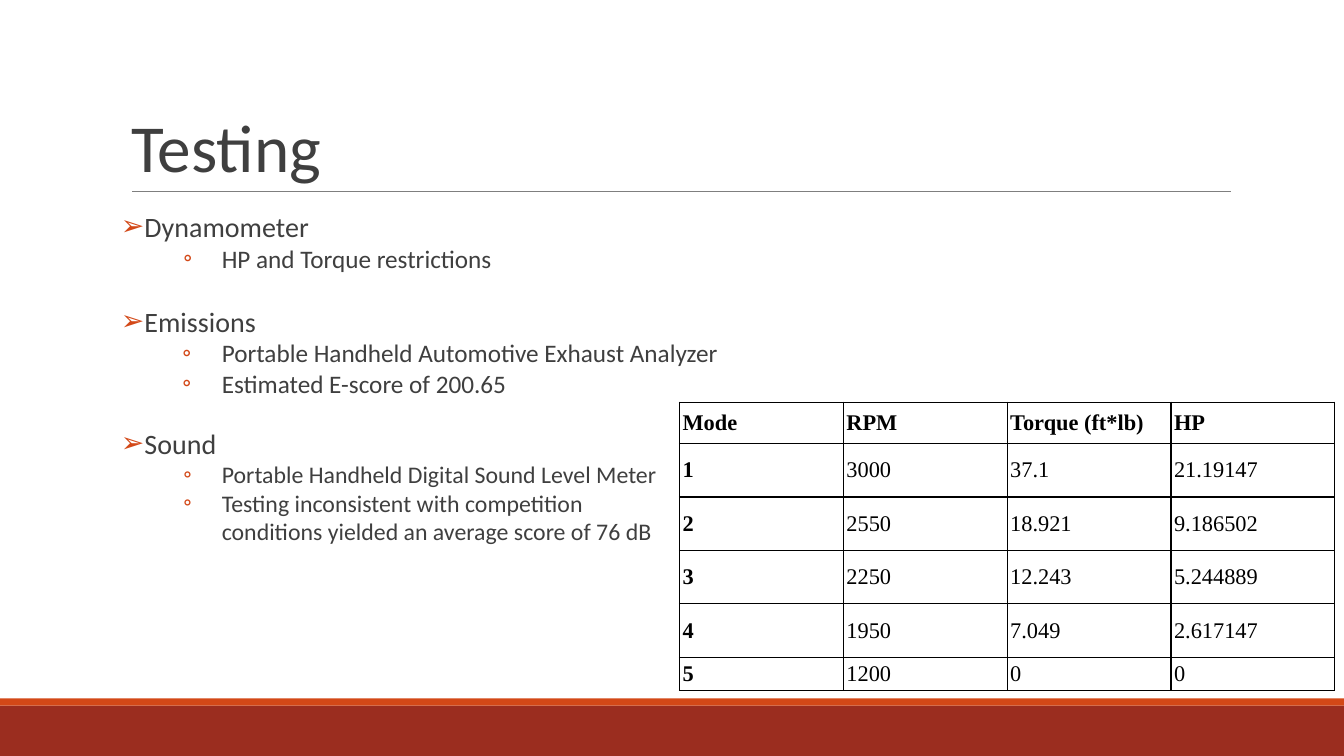
from lxml import etree
from pptx import Presentation
from pptx.dml.color import RGBColor
from pptx.enum import shapes, text
from pptx.oxml import parse_xml
from pptx.oxml.ns import nsdecls, qn
from pptx.util import Inches, Pt

RUST = RGBColor(0x9B, 0x2D, 0x1F)
ORANGE = RGBColor(0xD3, 0x48, 0x17)
GRAY = RGBColor(0x7F, 0x7F, 0x7F)
DARK = RGBColor(0x3F, 0x3F, 0x3F)
BLACK = RGBColor(0, 0, 0)
WHITE = RGBColor(255, 255, 255)

TOPICS = [
    ("Dynamometer", 0, 18, 0.38, ["HP and Torque restrictions"]),
    ("Emissions", 22, 18, 0.39, [
        "Portable Handheld Automotive Exhaust Analyzer",
        "Estimated E-score of 200.65",
    ]),
    ("Sound", 20, 17, 0.38, [
        "Portable Handheld Digital Sound Level Meter",
        "Testing inconsistent with competition\vconditions yielded an average score of 76 dB",
    ]),
]

ROWS = [
    ("Mode", "RPM", "Torque (ft*lb)", "HP"),
    ("1", "3000", "37.1", "21.19147"),
    ("2", "2550", "18.921", "9.186502"),
    ("3", "2250", "12.243", "5.244889"),
    ("4", "1950", "7.049", "2.617147"),
    ("5", "1200", "0", "0"),
]
HEIGHTS = [0.41, 0.53, 0.53, 0.53, 0.53, 0.32]


def put(obj, **vals):
    for name, val in vals.items():
        setattr(obj, name, val)


def style(para, size, color, face="Calibri", bold=False):
    for run in para.runs:
        put(run.font, size=Pt(size), name=face, bold=bold)
        run.font.color.rgb = color


def place(shape, left, top, width, height):
    put(shape, left=Inches(left), top=Inches(top),
        width=Inches(width), height=Inches(height))


def add_band(slide, top, height, color):
    band = slide.shapes.add_shape(
        shapes.MSO_SHAPE.RECTANGLE, 0, Inches(top), Inches(13.33), Inches(height))
    band.shadow.inherit = False
    band.fill.solid()
    band.fill.fore_color.rgb = color
    band.line.fill.background()


def add_rule(slide):
    rule = slide.shapes.add_connector(
        shapes.MSO_CONNECTOR.STRAIGHT,
        Inches(1.31), Inches(1.9), Inches(12.21), Inches(1.9))
    rule.line.color.rgb = GRAY
    rule.line.width = Pt(0.75)
    etree.SubElement(rule._element.spPr, qn("a:effectLst"))


def set_title(slide):
    title = slide.shapes.title
    place(title, 1.2, 0.31, 11, 1.59)
    frame = title.text_frame
    frame.text = "Testing"
    put(frame, vertical_anchor=text.MSO_ANCHOR.BOTTOM, word_wrap=True,
        auto_size=text.MSO_AUTO_SIZE.NONE)
    para = frame.paragraphs[0]
    put(para, alignment=text.PP_ALIGN.LEFT, line_spacing=0.85)
    style(para, 48, DARK)


def add_point(frame, words, size, mark, left, indent, level=0, gap=0):
    first = frame.paragraphs[0]
    para = frame.add_paragraph() if first.runs else first
    para.text = words
    put(para, level=level, space_before=Pt(gap))
    style(para, size, DARK)
    props = para._p.get_or_add_pPr()
    props.set("marL", str(Inches(left)))
    props.set("indent", str(Inches(indent)))
    color = etree.SubElement(props, qn("a:buClr"))
    etree.SubElement(color, qn("a:srgbClr"), val=str(ORANGE))
    etree.SubElement(props, qn("a:buFont"), typeface="Calibri")
    etree.SubElement(props, qn("a:buChar"), char=mark)


def add_topics(slide):
    box = slide.shapes.add_textbox(
        Inches(1.2), Inches(2.03), Inches(11), Inches(4.4))
    frame = box.text_frame
    put(frame, word_wrap=True, margin_left=0, margin_right=0)
    for head, gap, size, hang, points in TOPICS:
        add_point(frame, head, 20, "➢", 0.1, -0.14, gap=gap)
        for point in points:
            add_point(frame, point, size, "◦", 1, -hang, level=1)


def add_edges(cell):
    props = cell._tc.get_or_add_tcPr()
    for spot, side in enumerate(("lnL", "lnR", "lnT", "lnB")):
        props.insert(spot, parse_xml(
            f'<a:{side} {nsdecls("a")} w="12700"><a:solidFill>'
            f'<a:srgbClr val="{BLACK}"/></a:solidFill></a:{side}>'))


def add_modes(slide):
    table = slide.shapes.add_table(
        len(ROWS), len(ROWS[0]), Inches(6.74), Inches(3.99),
        Inches(6.5), Inches(sum(HEIGHTS))).table
    put(table, first_row=False, horz_banding=False)
    inset = Inches(0.03)
    for i, (row, height) in enumerate(zip(ROWS, HEIGHTS)):
        table.rows[i].height = Inches(height)
        for j, words in enumerate(row):
            cell = table.cell(i, j)
            put(cell, text=words, vertical_anchor=text.MSO_ANCHOR.MIDDLE,
                margin_left=inset, margin_right=inset,
                margin_top=inset, margin_bottom=inset)
            cell.fill.solid()
            cell.fill.fore_color.rgb = WHITE
            style(cell.text_frame.paragraphs[0], 16, BLACK,
                  "Times New Roman", i == 0 or j == 0)
            add_edges(cell)


def main():
    deck = Presentation()
    put(deck, slide_width=Inches(13.33), slide_height=Inches(7.5))
    slide = deck.slides.add_slide(deck.slide_layouts[5])
    add_band(slide, 7, 0.5, RUST)
    add_band(slide, 6.93, 0.07, ORANGE)
    add_rule(slide)
    set_title(slide)
    add_topics(slide)
    add_modes(slide)
    deck.save("out.pptx")


if __name__ == "__main__":
    main()
